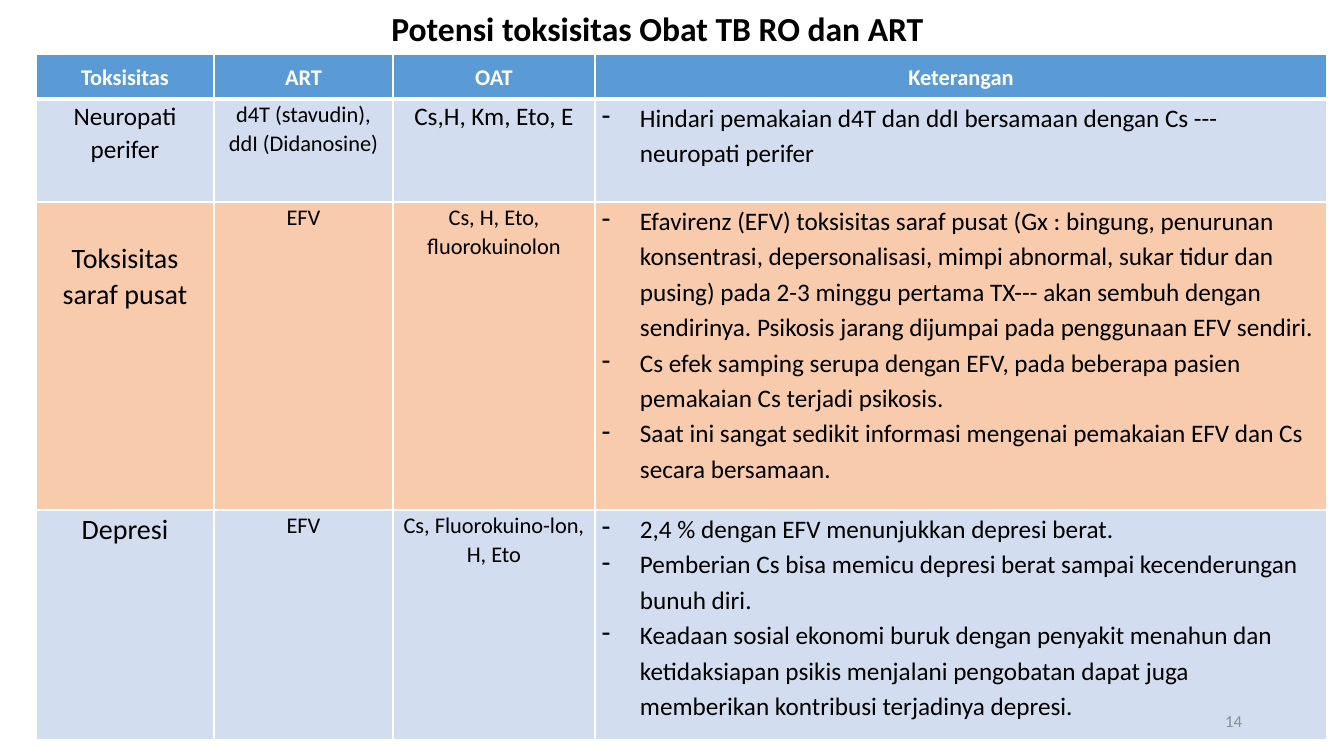
"""Build the slide on toxicity shared by TB RO drugs and ART."""
from dataclasses import dataclass

from lxml import etree
from pptx import Presentation
from pptx import util as u
from pptx.dml.color import RGBColor
from pptx.enum import text
from pptx.oxml import ns

PX = 914400 / 100.8
MID, RIGHT, LEFT = text.PP_ALIGN.CENTER, text.PP_ALIGN.RIGHT, text.PP_ALIGN.LEFT


@dataclass(frozen=True)
class Theme:
    font: str = "Calibri"
    white: str = "FFFFFF"
    black: str = "000000"
    gray: str = "8C8C8C"
    blue: str = "5B9BD5"
    pale: str = "D2DEEF"
    peach: str = "F8CBAD"
    title: int = 24
    large: int = 20
    body: int = 18
    small: int = 16
    tiny: int = 12


@dataclass(frozen=True)
class Style:
    size: int
    color: str = "000000"
    bold: bool = False
    align: text.PP_ALIGN = MID
    space: float = 1.07
    dash: bool = False


@dataclass(frozen=True)
class Entry:
    lines: tuple[str, ...]
    style: Style
    top: int = 0


@dataclass(frozen=True)
class Row:
    height: int
    fill: str
    cells: tuple[Entry, ...]


@dataclass(frozen=True)
class Label:
    words: str
    box: tuple[int, int, int, int]
    style: Style
    anchor: text.MSO_ANCHOR


T = Theme()
HEAD = Style(T.small, T.white, True)
LARGE, BODY, SMALL = Style(T.large), Style(T.body), Style(T.small)
NOTE = Style(T.body, align=LEFT, space=1.15, dash=True)

WIDTHS = (178, 179, 202, 732)
ROWS = (
    Row(45, T.blue, tuple(Entry((name,), HEAD) for name in ("Toksisitas", "ART", "OAT", "Keterangan"))),
    Row(103, T.pale, (
        Entry(("Neuropati perifer",), BODY),
        Entry(("d4T (stavudin),", "ddI (Didanosine)"), SMALL),
        Entry(("Cs,H, Km, Eto, E",), BODY),
        Entry(("Hindari pemakaian d4T dan ddI bersamaan dengan Cs --- neuropati perifer",), NOTE),
    )),
    Row(308, T.peach, (
        Entry(("Toksisitas\vsaraf pusat",), LARGE, 37),
        Entry(("EFV",), SMALL),
        Entry(("Cs, H, Eto, fluorokuinolon",), SMALL),
        Entry((
            "Efavirenz (EFV) toksisitas saraf pusat (Gx : bingung, penurunan konsentrasi, "
            "depersonalisasi, mimpi abnormal, sukar tidur dan pusing) pada 2-3 minggu pertama "
            "TX--- akan sembuh dengan sendirinya. Psikosis jarang dijumpai pada penggunaan EFV sendiri.",
            "Cs efek samping serupa dengan EFV, pada beberapa pasien pemakaian Cs terjadi psikosis.",
            "Saat ini sangat sedikit informasi mengenai pemakaian EFV dan Cs secara bersamaan.",
        ), NOTE),
    )),
    Row(230, T.pale, (
        Entry(("Depresi",), LARGE),
        Entry(("EFV",), SMALL),
        Entry(("Cs, Fluorokuino-lon, H, Eto",), SMALL),
        Entry((
            "2,4 % dengan EFV menunjukkan depresi berat.",
            "Pemberian Cs bisa memicu depresi berat sampai kecenderungan bunuh diri.",
            "Keadaan sosial ekonomi buruk dengan penyakit menahun dan ketidaksiapan psikis "
            "menjalani pengobatan dapat juga memberikan kontribusi terjadinya depresi.",
        ), NOTE),
    )),
)
LABELS = (
    Label("Potensi toksisitas Obat TB RO dan ART", (241, 3, 833, 132),
          Style(T.title, bold=True, space=1.0), text.MSO_ANCHOR.TOP),
    Label("14", (950, 701, 302, 40),
          Style(T.tiny, T.gray, align=RIGHT, space=1.0), text.MSO_ANCHOR.MIDDLE),
)


def emu(px: int) -> u.Emu:
    return u.Emu(round(px * PX))


def write(frame, lines: tuple[str, ...], style: Style) -> None:
    for i, line in enumerate(lines):
        para = frame.add_paragraph() if i else frame.paragraphs[0]
        para.text = line
        para.alignment = style.align
        para.line_spacing = style.space
        if style.dash:
            props = para._p.get_or_add_pPr()
            props.set("marL", str(emu(38)))
            props.set("indent", str(-emu(38)))
            etree.SubElement(props, ns.qn("a:buChar"), char="-")
        font = para.font
        font.name, font.size, font.bold = T.font, u.Pt(style.size), style.bold
        font.color.rgb = RGBColor.from_string(style.color)


def edge(cell, top: int, base: int) -> None:
    props = cell._tc.get_or_add_tcPr()
    sides = (("L", 1), ("R", 1), ("T", top), ("B", base))
    for i, (side, width) in enumerate(sides):
        line = etree.Element(ns.qn(f"a:ln{side}"), w=str(u.Pt(width)))
        fill = etree.SubElement(line, ns.qn("a:solidFill"))
        etree.SubElement(fill, ns.qn("a:srgbClr"), val=T.white)
        props.insert(i, line)


def grid(slide) -> None:
    height = sum(row.height for row in ROWS)
    frame = slide.shapes.add_table(len(ROWS), len(WIDTHS), emu(36), emu(54), emu(sum(WIDTHS)), emu(height))
    table = frame.table
    for col, width in zip(table.columns, WIDTHS):
        col.width = emu(width)
    for r, row in enumerate(ROWS):
        table.rows[r].height = emu(row.height)
        for c, entry in enumerate(row.cells):
            cell = table.cell(r, c)
            cell.margin_left = cell.margin_right = emu(7)
            cell.margin_top, cell.margin_bottom = emu(entry.top), 0
            cell.vertical_anchor = text.MSO_ANCHOR.TOP if r else text.MSO_ANCHOR.MIDDLE
            cell.fill.solid()
            cell.fill.fore_color.rgb = RGBColor.from_string(row.fill)
            edge(cell, 3 if r == 1 else 1, 1 if r else 3)
            write(cell.text_frame, entry.lines, entry.style)


def label(slide, item: Label) -> None:
    frame = slide.shapes.add_textbox(*map(emu, item.box)).text_frame
    frame.word_wrap = True
    frame.vertical_anchor = item.anchor
    write(frame, (item.words,), item.style)


def main() -> None:
    deck = Presentation()
    deck.slide_width, deck.slide_height = emu(1344), emu(756)
    slide = deck.slides.add_slide(deck.slide_layouts[6])
    grid(slide)
    for item in LABELS:
        label(slide, item)
    deck.save("out.pptx")


if __name__ == "__main__":
    main()
